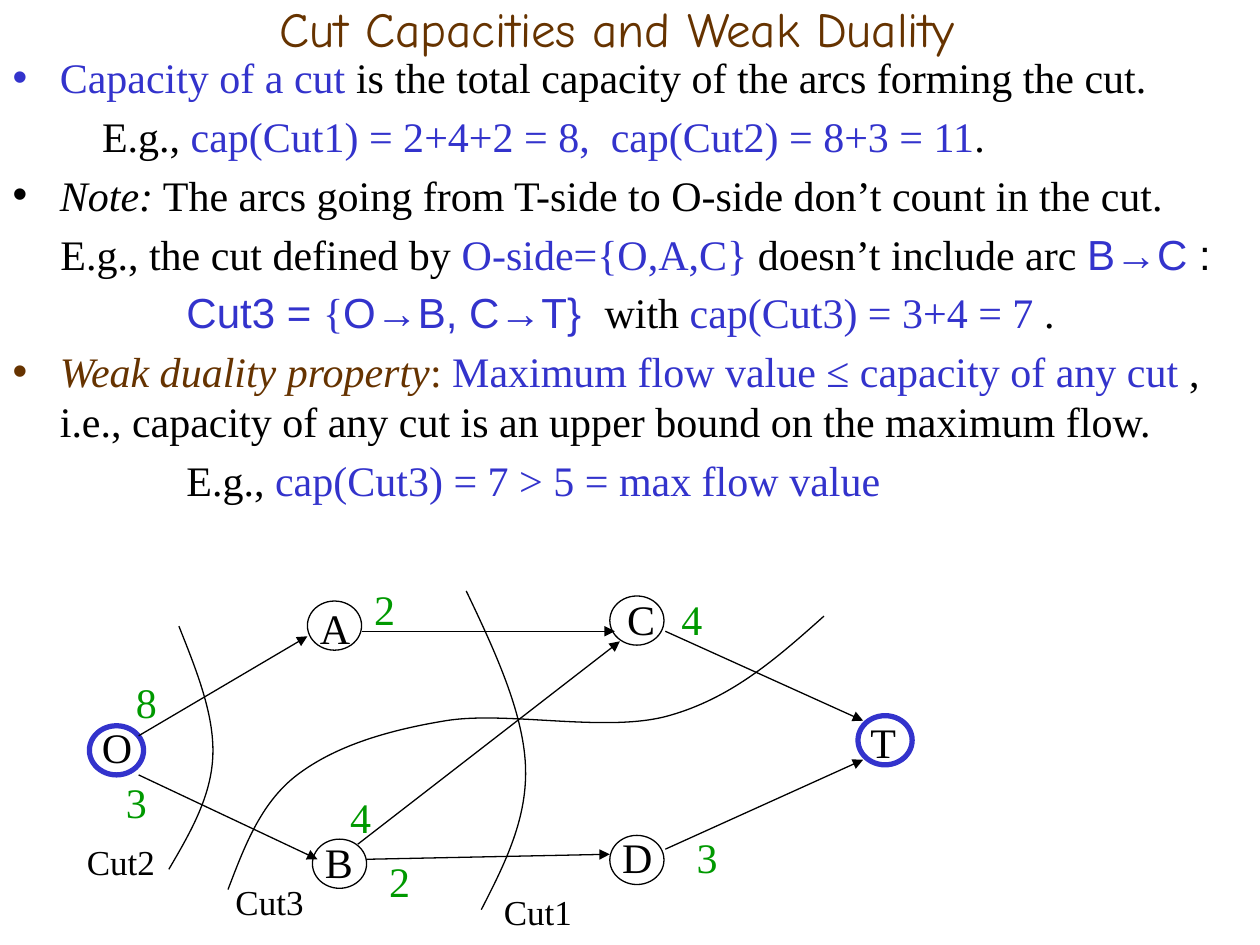
"""Build the slide on cut capacities and weak duality in a flow network."""
from lxml.etree import SubElement
from pptx import Presentation
from pptx.dml.color import RGBColor
from pptx.enum.shapes import MSO_CONNECTOR as Connector, MSO_SHAPE as Shape
from pptx.enum.text import MSO_AUTO_SIZE as AutoSize
from pptx.oxml.ns import qn
from pptx.util import Inches, Pt

COLORS = {"black": "000000", "white": "FFFFFF", "blue": "3333CC", "brown": "663300", "green": "009900"}
SERIF, SANS, COMIC = "Times New Roman", "Arial", "Comic Neue"
BLUE = {"color": "blue"}
BLUE_SANS = {"color": "blue", "font": SANS}
NODE_SIZE = (0.43, 0.39)

# Each paragraph: left indent (None for a bullet) and its spans.
BODY = [
    (None, [("Capacity of a cut", BLUE), (" is the total capacity of the arcs forming the cut.", {})]),
    (0.71, [("E.g., ", {}), ("cap(Cut1) = 2+4+2 = 8,  cap(Cut2) = 8+3 = 11", BLUE), (".", {})]),
    (None, [("Note:", {"italic": True}),
            (" The arcs going from T-side to O-side don’t count in the cut.", {})]),
    (0.38, [("E.g., the cut defined by ", {}), ("O-side={O,A,C}", BLUE),
            (" doesn’t include arc ", {}), ("B→C", BLUE_SANS), (" :", {"font": SANS})]),
    (1.38, [("Cut3 = ", BLUE_SANS), ("{", BLUE), ("O→B, C→T}  ", BLUE_SANS), ("with", {}),
            (" cap(Cut3) = 3+4 = 7 ", BLUE), (".", {})]),
    (None, [("Weak duality property", {"color": "brown", "italic": True}), (": ", {"color": "brown"}),
            ("Maximum flow value ≤ capacity of any cut ", BLUE),
            (", i.e., capacity of any cut is an upper bound on the maximum flow.", {})]),
    (1.38, [("E.g., ", {}), ("cap(Cut3) = 7 > 5 = max flow value", BLUE)]),
]
CAPACITIES = [("8", 0.98, 5.32), ("2", 2.87, 4.58), ("4", 5.31, 4.66), ("3", 5.43, 6.55),
              ("4", 2.68, 6.23), ("2", 2.99, 6.74), ("3", 0.9, 6.11)]
# Each node: circle corner, then label corner.
NODES = {
    "T": ((6.81, 5.68), (6.81, 5.64)),
    "D": ((4.84, 6.63), (4.84, 6.55)),
    "C": ((4.84, 4.73), (4.88, 4.66)),
    "B": ((2.48, 6.66), (2.48, 6.59)),
    "A": ((2.44, 4.77), (2.44, 4.73)),
    "O": ((0.71, 5.76), (0.71, 5.68)),
}
TERMINALS = "OT"
ARCS = [((1.1, 5.84), (2.44, 5.05)), ((1.1, 6.15), (2.52, 6.82)), ((2.87, 5.01), (4.88, 5.01)),
        ((2.91, 6.82), (4.84, 6.78)), ((5.28, 6.74), (6.85, 6.03)), ((5.28, 5.01), (6.85, 5.72)),
        ((2.84, 6.7), (4.92, 5.09))]
# Each cut: label corner, then a chain of cubic curve points.
CUTS = {
    "Cut2": ((0.59, 6.62), [(1.42, 4.97), (1.56, 5.32), (1.7, 5.67), (1.69, 5.99),
                            (1.68, 6.32), (1.51, 6.61), (1.34, 6.9)]),
    "Cut1": ((3.9, 7.02), [(3.7, 4.69), (3.93, 5.17), (4.15, 5.65), (4.17, 6.07),
                           (4.19, 6.49), (4.01, 6.85), (3.82, 7.22)]),
    "Cut3": ((1.77, 6.94), [(1.81, 7.06), (1.94, 6.72), (2.07, 6.37), (2.36, 6.15),
                            (2.65, 5.93), (3.05, 5.8), (3.54, 5.72), (4.03, 5.64), (4.82, 5.82),
                            (5.31, 5.68), (5.81, 5.54), (6.17, 5.22), (6.54, 4.89)]),
}


def rgb(name):
    return RGBColor.from_string(COLORS[name])


def write(para, text, *, size=24, font=SERIF, color="black", italic=False):
    span = para.add_run()
    span.text = text
    span.font.size = Pt(size)
    span.font.name = font
    span.font.italic = italic
    span.font.color.rgb = rgb(color)


def place(box, left, top, width, height):
    box.left, box.top, box.width, box.height = map(Inches, (left, top, width, height))
    box.text_frame.auto_size = AutoSize.NONE


def fill_body(box):
    frame = box.text_frame
    for index, (indent, spans) in enumerate(BODY):
        para = frame.add_paragraph() if index else frame.paragraphs[0]
        if indent is not None:
            properties = para._p.get_or_add_pPr()
            properties.set("marL", str(Inches(indent)))
            properties.set("indent", "0")
            SubElement(properties, qn("a:buNone"))
        for text, style in spans:
            write(para, text, **style)


def add_label(page, text, left, top, width=0.43, height=0.5, **style):
    box = page.shapes.add_textbox(*map(Inches, (left, top, width, height)))
    box.text_frame.word_wrap = True
    write(box.text_frame.paragraphs[0], text, **style)


def set_line(shape, color="black", width=0.75):
    shape.line.color.rgb = rgb(color)
    shape.line.width = Pt(width)


def add_node(page, name, corner):
    circle = page.shapes.add_shape(Shape.OVAL, *map(Inches, corner + NODE_SIZE))
    circle.shadow.inherit = False
    circle.fill.solid()
    circle.fill.fore_color.rgb = rgb("white")
    if name in TERMINALS:
        set_line(circle, "blue", 3)
    else:
        set_line(circle)


def add_arc(page, start, end):
    arc = page.shapes.add_connector(Connector.STRAIGHT, *map(Inches, start + end))
    set_line(arc)
    SubElement(arc.line._get_or_add_ln(), qn("a:tailEnd"), type="triangle")
    SubElement(arc._element.spPr, qn("a:effectLst"))


def add_curve(page, points):
    start, *rest = [tuple(map(Inches, point)) for point in points]
    builder = page.shapes.build_freeform(*start)
    builder.add_line_segments(rest, close=False)
    curve = builder.convert_to_shape()
    segments = list(curve._element.iter(qn("a:lnTo")))
    outline = segments[0].getparent()
    for first in range(0, len(segments), 3):
        cubic = SubElement(outline, qn("a:cubicBezTo"))
        for segment in segments[first:first + 3]:
            cubic.append(segment[0])
            outline.remove(segment)
    curve.shadow.inherit = False
    curve.fill.background()
    set_line(curve)


def main():
    deck = Presentation()
    deck.slide_width, deck.slide_height = Inches(10), Inches(7.5)
    page = deck.slides.add_slide(deck.slide_layouts[1])
    title, body = page.placeholders
    place(title, 0.43, 0, 8.94, 0.44)
    write(title.text_frame.paragraphs[0], "Cut Capacities and Weak Duality",
          size=28, font=COMIC, color="brown")
    place(body, 0, 0.36, 10, 7.14)
    fill_body(body)
    for text, left, top in CAPACITIES:
        add_label(page, text, left, top, width=0.39, color="green")
    for name, (corner, label) in NODES.items():
        add_node(page, name, corner)
        add_label(page, name, *label)
    for start, end in ARCS:
        add_arc(page, start, end)
    for name, (label, points) in CUTS.items():
        add_curve(page, points)
        add_label(page, name, *label, width=0.79, height=0.43, size=20)
    deck.save("out.pptx")


if __name__ == "__main__":
    main()
